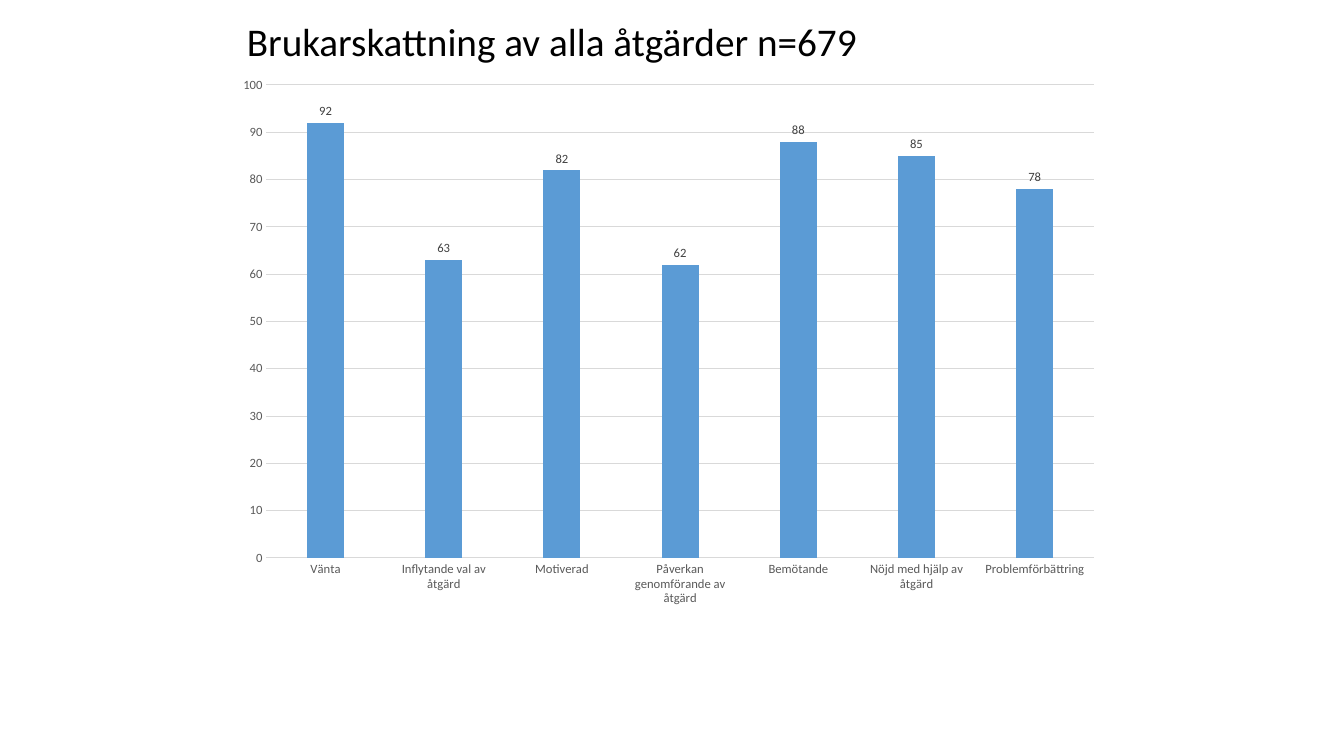
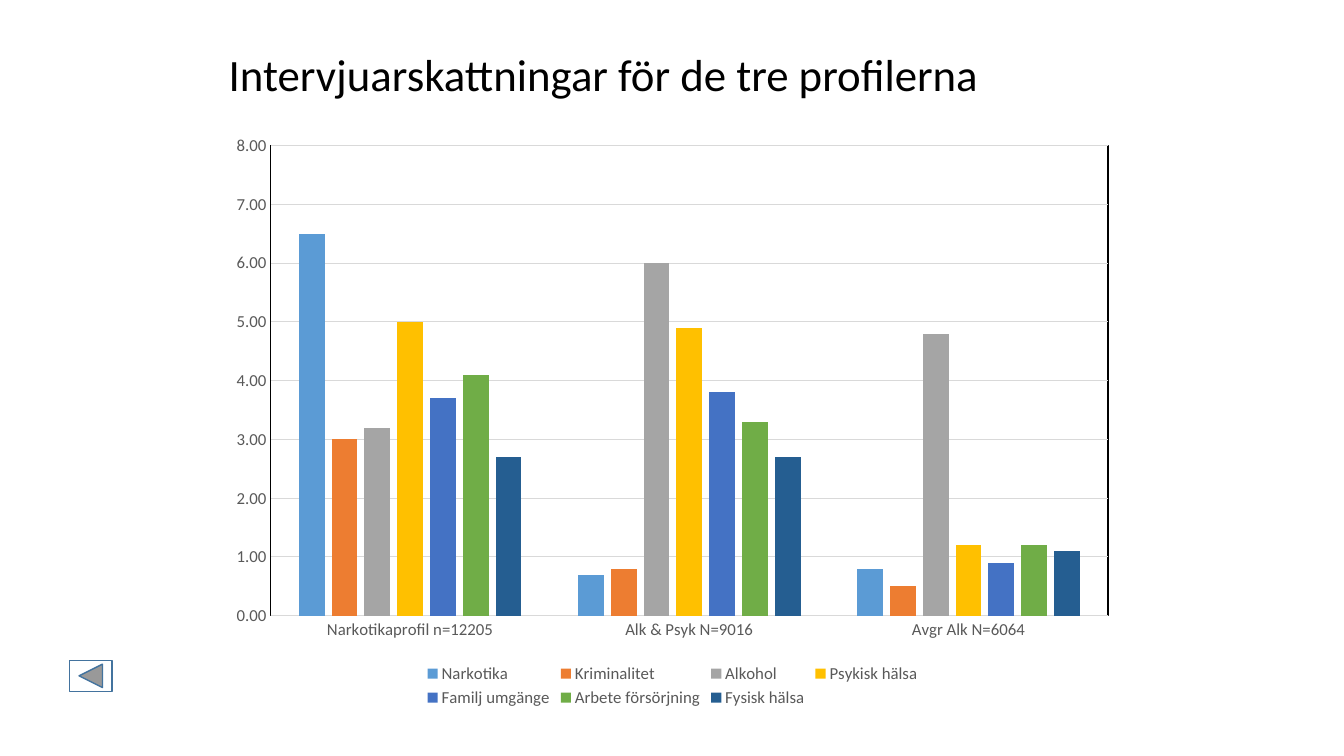
from lxml import etree
from pptx import Presentation
from pptx.chart.data import CategoryChartData
from pptx.dml.color import RGBColor
from pptx.enum.chart import XL_CHART_TYPE as ChartType
from pptx.enum.chart import XL_LABEL_POSITION as LabelPosition
from pptx.enum.chart import XL_LEGEND_POSITION as LegendPosition
from pptx.enum.chart import XL_TICK_MARK as TickMark
from pptx.enum.shapes import MSO_SHAPE as Shape
from pptx.enum.text import MSO_ANCHOR as Anchor
from pptx.oxml import parse_xml
from pptx.oxml.ns import nsdecls, qn
from pptx.util import Inches, Pt

# Shared style
FONT = "Calibri"
BLACK, WHITE = "000000", "FFFFFF"
AXIS_TEXT, LABEL_TEXT, GRID = "595959", "404040", "D9D9D9"
BUTTON_LINE = "43739E"
SERIES_COLORS = ["5B9BD5", "ED7D31", "A5A5A5", "FFC000", "4472C4", "70AD47", "255E91"]

# Chart contents
RATING_CATEGORIES = [
    "Vänta", "Inflytande val av åtgärd", "Motiverad",
    "Påverkan genomförande av åtgärd", "Bemötande",
    "Nöjd med hjälp av åtgärd", "Problemförbättring",
]
RATINGS = {"Series 1": [92, 63, 82, 62, 88, 85, 78]}
PROFILES = ["Narkotikaprofil n=12205", "Alk & Psyk N=9016", "Avgr Alk N=6064"]
PROFILE_SCORES = {
    "Narkotika": [6.5, 0.7, 0.8],
    "Kriminalitet": [3, 0.8, 0.5],
    "Alkohol": [3.2, 6, 4.8],
    "Psykisk hälsa": [5, 4.9, 1.2],
    "Familj umgänge": [3.7, 3.8, 0.9],
    "Arbete försörjning": [4.1, 3.3, 1.2],
    "Fysisk hälsa": [2.7, 2.7, 1.1],
}


def color(value):
    return RGBColor.from_string(value)


def style_font(font, size, value):
    font.name = FONT
    font.size = Pt(size)
    font.color.rgb = color(value)


def style_line(line, value, width=0.75):
    line.color.rgb = color(value)
    line.width = Pt(width)


def add_title(slide, text, box, size):
    frame = slide.shapes.add_textbox(*map(Inches, box)).text_frame
    frame.word_wrap = True
    frame.vertical_anchor = Anchor.MIDDLE
    paragraph = frame.paragraphs[0]
    paragraph.line_spacing = 0.9
    run = paragraph.add_run()
    run.text = text
    style_font(run.font, size, BLACK)


def set_plot_layout(chart, layout):
    """Place the inner plot area, in fractions of the chart."""
    plot_area = chart.plots[0]._element.getparent()
    for old_layout in plot_area.findall(qn("c:layout")):
        plot_area.remove(old_layout)
    element = parse_xml(f"<c:layout {nsdecls('c')}><c:manualLayout/></c:layout>")
    settings = [("layoutTarget", "inner"), ("xMode", "edge"), ("yMode", "edge")]
    settings += zip("xywh", layout)
    for name, value in settings:
        etree.SubElement(element[0], qn(f"c:{name}")).set("val", str(value))
    plot_area.insert(0, element)
    return plot_area


def add_plot_border(plot_area):
    plot_area.append(parse_xml(
        f"<c:spPr {nsdecls('c', 'a')}><a:noFill/><a:ln w='9525'><a:solidFill>"
        f"<a:srgbClr val='{BLACK}'/></a:solidFill></a:ln></c:spPr>"))


def add_column_chart(slide, box, categories, series_values, layout, size,
                     maximum, step, number_format):
    data = CategoryChartData()
    data.categories = categories
    for name, values in series_values.items():
        data.add_series(name, values)
    chart = slide.shapes.add_chart(
        ChartType.COLUMN_CLUSTERED, *map(Inches, box), data).chart
    chart.has_title = False
    chart.has_legend = False
    style_font(chart.font, size, AXIS_TEXT)

    # Columns
    plot = chart.plots[0]
    plot.gap_width, plot.overlap = 219, -27
    plot.vary_by_categories = False
    for series, fill in zip(plot.series, SERIES_COLORS):
        series.format.fill.solid()
        series.format.fill.fore_color.rgb = color(fill)

    # Axes
    for axis in (chart.category_axis, chart.value_axis):
        axis.major_tick_mark = axis.minor_tick_mark = TickMark.NONE
        style_font(axis.tick_labels.font, size, AXIS_TEXT)
    style_line(chart.category_axis.format.line, GRID)
    axis = chart.value_axis
    axis.minimum_scale, axis.maximum_scale, axis.major_unit = 0, maximum, step
    axis.format.line.fill.background()
    axis.has_major_gridlines = True
    style_line(axis.major_gridlines.format.line, GRID)
    axis.tick_labels.number_format = number_format
    axis.tick_labels.number_format_is_linked = False
    return chart, set_plot_layout(chart, layout)


def add_value_labels(chart):
    plot = chart.plots[0]
    plot.has_data_labels = True
    labels = plot.data_labels
    labels.show_value = True
    labels.position = LabelPosition.OUTSIDE_END
    style_font(labels.font, 9, LABEL_TEXT)


def add_legend(chart):
    chart.has_legend = True
    chart.legend.position = LegendPosition.BOTTOM
    chart.legend.include_in_layout = False
    style_font(chart.legend.font, 12, AXIS_TEXT)


def add_back_button(slide, box):
    button = slide.shapes.add_shape(
        Shape.ACTION_BUTTON_BACK_OR_PREVIOUS, *map(Inches, box))
    button.shadow.inherit = False
    button.fill.solid()
    button.fill.fore_color.rgb = color(WHITE)
    style_line(button.line, BUTTON_LINE, 1)


def build_rating_slide(slide):
    add_title(slide, "Brukarskattning av alla åtgärder n=679",
              (2.35, 0.13, 8.62, 0.6), 28)
    chart, _ = add_column_chart(
        slide, (2.35, 0.76, 8.62, 5.25), RATING_CATEGORIES, RATINGS,
        (0.034, 0.016, 0.952, 0.899), 9, 100, 10, "0")
    add_value_labels(chart)


def build_profile_slide(slide):
    add_title(slide, "Intervjuarskattningar för de tre profilerna",
              (2.17, 0.3, 9, 0.93), 32)
    chart, plot_area = add_column_chart(
        slide, (2.17, 1.23, 9, 5.83), PROFILES, PROFILE_SCORES,
        (0.057, 0.037, 0.923, 0.8), 12, 8, 1, "0.00")
    add_plot_border(plot_area)
    add_legend(chart)
    add_back_button(slide, (0.69, 6.55, 0.42, 0.31))


def main():
    presentation = Presentation()
    presentation.slide_width = Inches(13.33)
    presentation.slide_height = Inches(7.5)
    blank = presentation.slide_layouts[6]
    for build in (build_rating_slide, build_profile_slide):
        build(presentation.slides.add_slide(blank))
    presentation.save("out.pptx")


if __name__ == "__main__":
    main()
